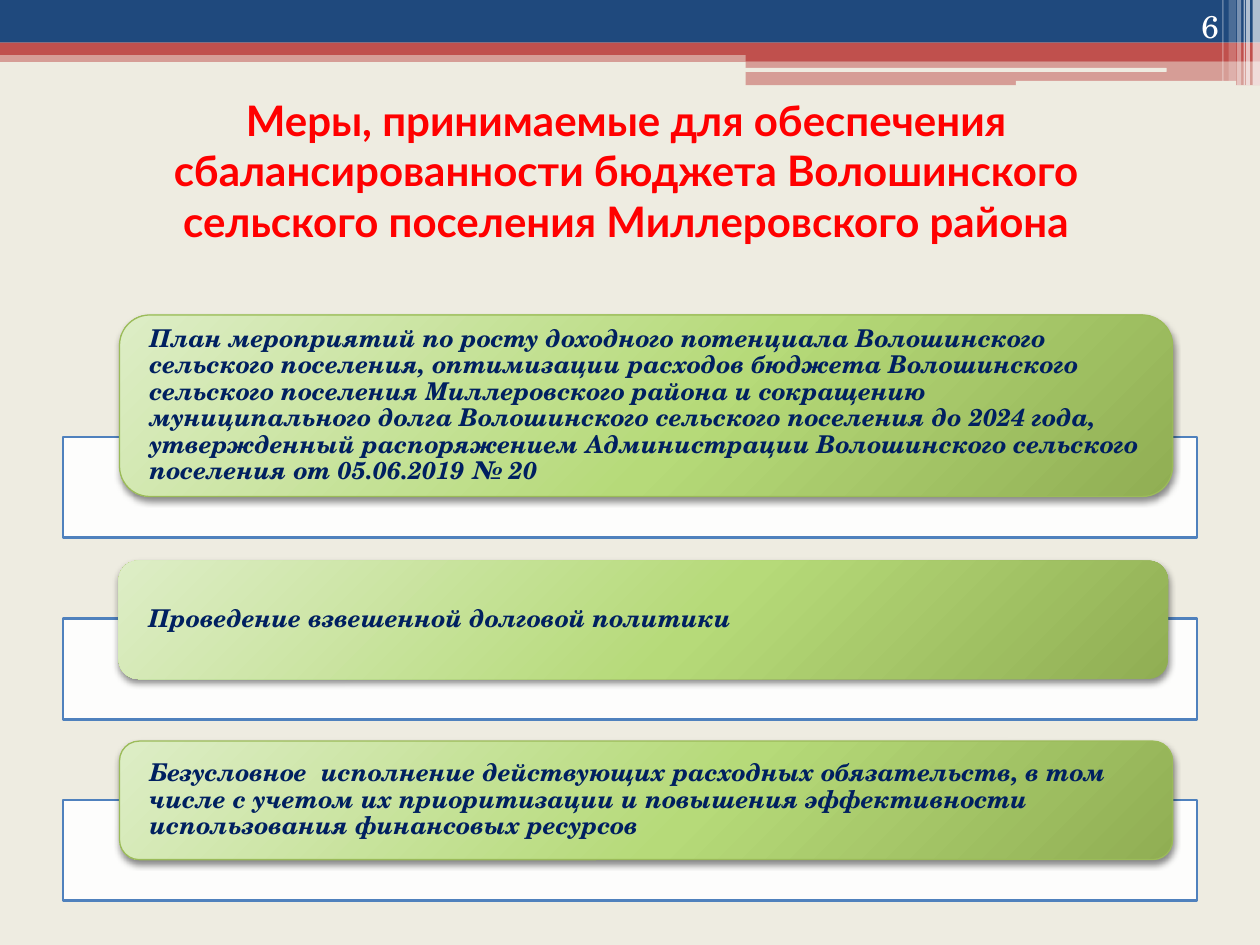
"""Build a slide with a title and three budget-balance measures on framed cards."""
from lxml.etree import SubElement
from pptx import Presentation
from pptx.dml.color import RGBColor
from pptx.enum.shapes import MSO_SHAPE
from pptx.enum.text import MSO_ANCHOR, PP_ALIGN
from pptx.oxml import parse_xml
from pptx.oxml.ns import nsdecls, qn
from pptx.util import Cm, Pt

CREAM = RGBColor(0xEE, 0xEC, 0xE1)
NAVY = RGBColor(0x1F, 0x49, 0x7D)
BRICK = RGBColor(0xC0, 0x50, 0x4D)
WHITE = RGBColor(0xFF, 0xFF, 0xFF)
RED = RGBColor(0xFF, 0x00, 0x00)
INK = RGBColor(0x00, 0x20, 0x60)
BLUE = RGBColor(0x4F, 0x81, 0xBD)
GREEN = RGBColor(0x9B, 0xBB, 0x59)
BLACK = RGBColor(0x00, 0x00, 0x00)
CARD_STOPS = (
    (0, RGBColor(0xDD, 0xED, 0xC6)),
    (55, RGBColor(0xB6, 0xDA, 0x79)),
    (100, RGBColor(0x90, 0xAE, 0x53)),
)

TITLE_FONT = "Lato"
BODY_FONT = "TeX Gyre Schola"
TITLE = ("Меры, принимаемые для обеспечения сбалансированности бюджета "
         "Волошинского сельского поселения Миллеровского района")

BANDS = (
    (0, 1.02, 25.4, 0.23, BRICK, 50),
    (0, 0, 25.4, 0.86, NAVY, 100),
    (0, 0.86, 25.4, 0.25, BRICK, 100),
    (15.03, 0.99, 10.37, 0.24, BRICK, 100),
    (15.03, 1.23, 10.37, 0.49, BRICK, 50),
)
SLOTS = ((15.02, 1.37, 8.5, 0.08), (20.48, 1.63, 4.44, 0.1))
STRIPES = (
    (25.25, 0.15, 1.72, 65),
    (25.12, 0.08, 1.72, 65),
    (25.07, 0.03, 1.72, 60),
    (24.94, 0.08, 1.72, 40),
    (24.77, 0.15, 1.63, 20),
    (24.64, 0.03, 1.63, 30),
)
FRAME_TOP, FRAME_PITCH = 8.81, 3.66
MEASURES = (
    (2.41, 6.35, 21.23, 3.66, GREEN,
     "План мероприятий по росту доходного потенциала Волошинского сельского "
     "поселения, оптимизации расходов бюджета Волошинского сельского поселения "
     "Миллеровского района и сокращению муниципального долга Волошинского "
     "сельского поселения до 2024 года, утвержденный распоряжением "
     "Администрации Волошинского сельского поселения от 05.06.2019 № 20"),
    (2.39, 11.3, 21.16, 2.39, None,
     "Проведение взвешенной долговой политики"),
    (2.41, 14.94, 21.23, 2.39, GREEN,
     "Безусловное  исполнение действующих расходных обязательств, в том числе "
     "с учетом их приоритизации и повышения эффективности использования "
     "финансовых ресурсов"),
)


def add_block(page, kind, left, top, width, height, color, opacity=100):
    """Add a borderless filled shape with the given opacity in percent."""
    block = page.shapes.add_shape(kind, Cm(left), Cm(top), Cm(width), Cm(height))
    block.shadow.inherit = False
    block.fill.solid()
    block.fill.fore_color.rgb = color
    block.line.fill.background()
    if opacity < 100:
        tint = block.fill._xPr.find(qn("a:solidFill"))[0]
        SubElement(tint, qn("a:alpha"), val=str(opacity * 1000))
    return block


def outline(block, color, width):
    """Give a shape a solid line."""
    block.line.color.rgb = color
    block.line.width = Pt(width)


def write_text(block, text, font, size, color, align, bold=False, italic=False):
    """Write one formatted paragraph and return it."""
    block.text_frame.word_wrap = True
    para = block.text_frame.paragraphs[0]
    para.text = text
    para.alignment = align
    para.font.name = font
    para.font.size = Pt(size)
    para.font.color.rgb = color
    para.font.bold = bold
    para.font.italic = italic
    return para


def add_label(page, left, top, width, height, anchor, *style):
    """Add a text box with one paragraph."""
    box = page.shapes.add_textbox(Cm(left), Cm(top), Cm(width), Cm(height))
    box.text_frame.vertical_anchor = anchor
    write_text(box, *style)


def apply_glow_gradient(block):
    """Replace the fill with a circular gradient and add a soft shadow below."""
    stops = "".join(f'<a:gs pos="{place * 1000}"><a:srgbClr val="{color}"/></a:gs>'
                    for place, color in CARD_STOPS)
    gradient = parse_xml(
        f'<a:gradFill {nsdecls("a")} rotWithShape="1"><a:gsLst>{stops}</a:gsLst>'
        '<a:path path="circle"><a:fillToRect l="-40000" t="-90000" r="140000" '
        'b="190000"/></a:path></a:gradFill>')
    shadow = parse_xml(
        f'<a:effectLst {nsdecls("a")}><a:outerShdw blurRad="{Pt(4)}" dist="{Pt(2)}" '
        f'dir="5400000" rotWithShape="0"><a:srgbClr val="{BLACK}">'
        '<a:alpha val="45000"/></a:srgbClr></a:outerShdw></a:effectLst>')
    properties = block._element.spPr
    properties.replace(properties.find(qn("a:solidFill")), gradient)
    properties.replace(properties.find(qn("a:effectLst")), shadow)


def add_card(page, left, top, width, height, border, text):
    """Add a rounded gradient card with its measure."""
    card = add_block(page, MSO_SHAPE.ROUNDED_RECTANGLE, left, top, width, height, GREEN)
    apply_glow_gradient(card)
    if border:
        outline(card, border, 0.75)
    frame = card.text_frame
    frame.vertical_anchor = MSO_ANCHOR.MIDDLE
    frame.margin_left = frame.margin_right = Cm(0.61 - 0.05 * height)
    frame.margin_top = frame.margin_bottom = 0
    para = write_text(card, text, BODY_FONT, 14, INK, PP_ALIGN.LEFT, True, True)
    para.line_spacing = 0.9


def add_header(page):
    """Add the colour bands, slots and corner stripes along the top."""
    for band in BANDS:
        add_block(page, MSO_SHAPE.RECTANGLE, *band)
    for slot in SLOTS:
        add_block(page, MSO_SHAPE.ROUNDED_RECTANGLE, *slot, CREAM)
    for left, width, height, opacity in STRIPES:
        add_block(page, MSO_SHAPE.RECTANGLE, left, 0, width, height, WHITE, opacity)


def main():
    """Build and save the deck."""
    deck = Presentation()
    deck.slide_width, deck.slide_height = Cm(25.4), Cm(19.05)
    page = deck.slides.add_slide(deck.slide_layouts[6])
    page.background.fill.solid()
    page.background.fill.fore_color.rgb = CREAM

    add_header(page)
    add_label(page, 1.7, 1.9, 21.84, 3.05, MSO_ANCHOR.MIDDLE,
              TITLE, TITLE_FONT, 24, RED, PP_ALIGN.CENTER, True)
    for index, measure in enumerate(MEASURES):
        frame = add_block(page, MSO_SHAPE.RECTANGLE, 1.27,
                          FRAME_TOP + index * FRAME_PITCH, 22.86, 2.03, WHITE, 90)
        outline(frame, BLUE, 1.5)
        add_card(page, *measure)
    add_label(page, 22.71, 0, 2.11, 1.02, MSO_ANCHOR.BOTTOM,
              "6", BODY_FONT, 18, WHITE, PP_ALIGN.RIGHT)
    deck.save("out.pptx")


if __name__ == "__main__":
    main()
